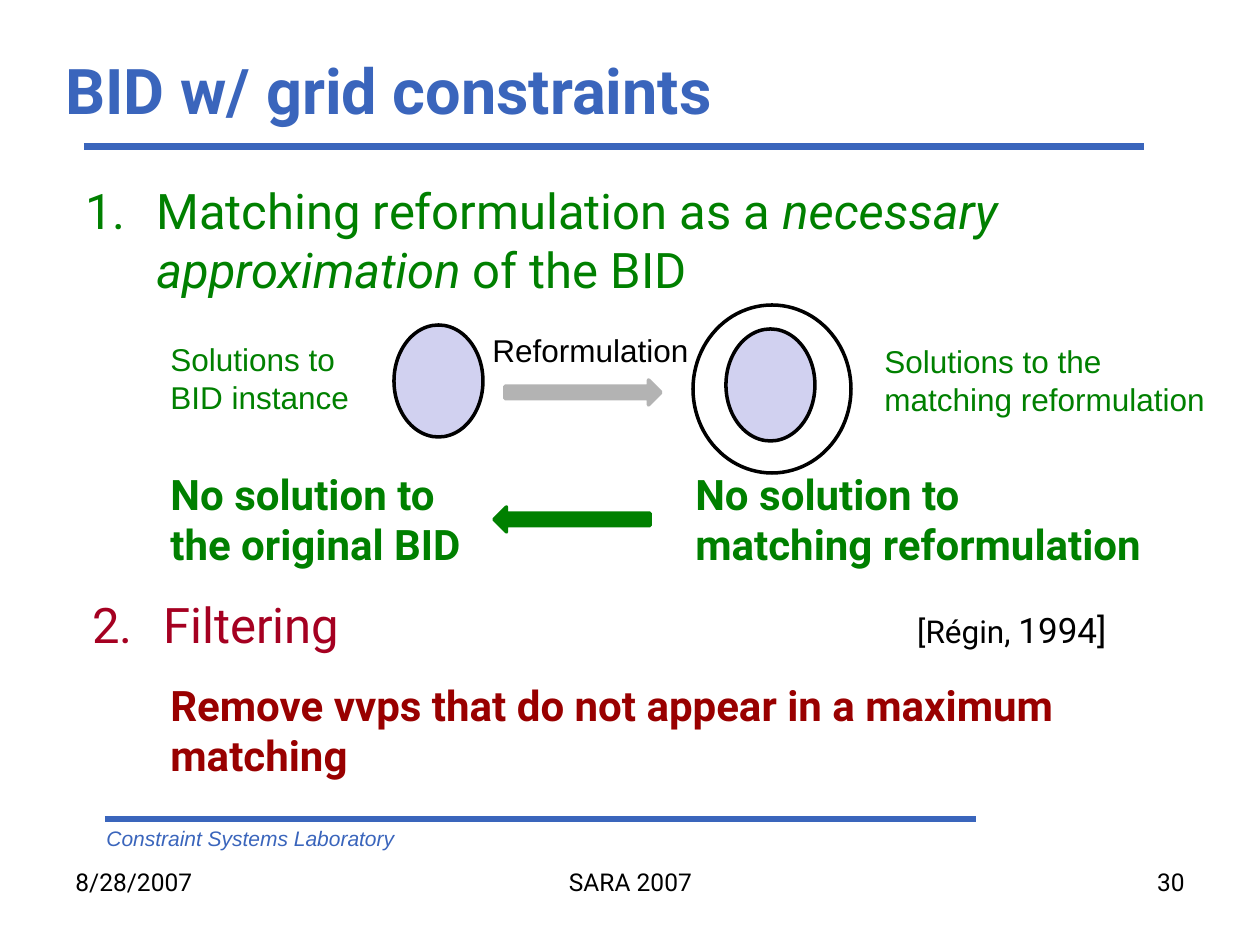
from lxml.etree import SubElement
from pptx import Presentation
from pptx.dml.color import RGBColor
from pptx.enum.shapes import MSO_CONNECTOR, MSO_SHAPE
from pptx.enum.text import MSO_ANCHOR, PP_ALIGN
from pptx.oxml.ns import qn
from pptx.util import Pt

EMU_PER_INCH = 914400
PX_PER_INCH = 126
WIDTH, HEIGHT = 1260, 945

BLUE, GREEN, CRIMSON, DARK_RED = "3A65BC", "008000", "A50021", "990000"
BLACK, WHITE, GREY, LAVENDER = "000000", "FFFFFF", "B3B3B3", "D1D1F0"


def px(length):
    return round(length * EMU_PER_INCH / PX_PER_INCH)


def rgb(color):
    return RGBColor.from_string(color)


def number_paragraph(paragraph, number, color, margin, hanging, tab=None):
    """Give a paragraph a hanging number and, if asked, a right tab stop."""
    properties = paragraph._p.get_or_add_pPr()
    properties.set("marL", str(px(margin)))
    properties.set("indent", str(-px(hanging)))
    bullet_color = SubElement(properties, qn("a:buClr"))
    SubElement(bullet_color, qn("a:srgbClr"), val=color)
    SubElement(properties, qn("a:buFont"), typeface="Roboto")
    SubElement(properties, qn("a:buAutoNum"), type="arabicPeriod", startAt=str(number))
    if tab:
        tabs = SubElement(properties, qn("a:tabLst"))
        SubElement(tabs, qn("a:tab"), pos=str(px(tab)), algn="r")


def format_font(font, size=None, name=None, color=None, bold=None, italic=None):
    if size:
        font.size = Pt(size)
    if name:
        font.name = name
    if color:
        font.color.rgb = rgb(color)
    font.bold = bold
    font.italic = italic


class SlideBuilder:
    def __init__(self, slide, font="Roboto", label_font="Arial"):
        self.slide = slide
        self.font = font
        self.label_font = label_font

    def text(self, box, *paragraphs, align=PP_ALIGN.LEFT, anchor=MSO_ANCHOR.TOP,
             wrap=True, numbering=None, name=None, **style):
        """Each paragraph is a string or a list of (text, format changes)."""
        frame = self.slide.shapes.add_textbox(*map(px, box)).text_frame
        frame.word_wrap = wrap
        frame.vertical_anchor = anchor
        for index, content in enumerate(paragraphs):
            paragraph = frame.add_paragraph() if index else frame.paragraphs[0]
            paragraph.alignment = align
            if numbering:
                number_paragraph(paragraph, **numbering)
            runs = [(content, {})] if isinstance(content, str) else content
            for words, changes in runs:
                run = paragraph.add_run()
                run.text = words
                format_font(run.font, **{"name": name or self.font, **style, **changes})

    def label(self, box, words, color=GREEN, size=18, **style):
        self.text(box, words, name=self.label_font, color=color, size=size, **style)

    def statement(self, box, *paragraphs, color=GREEN):
        self.text(box, *paragraphs, size=24, bold=True, color=color)

    def shape(self, kind, box, fill, line):
        shape = self.slide.shapes.add_shape(kind, *map(px, box))
        shape.shadow.inherit = False
        shape.fill.solid()
        shape.fill.fore_color.rgb = rgb(fill)
        shape.line.color.rgb = rgb(line)
        shape.line.width = Pt(2)

    def ellipse(self, box, fill=LAVENDER):
        self.shape(MSO_SHAPE.OVAL, box, fill, BLACK)

    def rule(self, left, right, y):
        line = self.slide.shapes.add_connector(
            MSO_CONNECTOR.STRAIGHT, px(left), px(y), px(right), px(y))
        line.line.color.rgb = rgb(BLUE)
        line.line.width = Pt(4)
        SubElement(line._element.spPr, qn("a:effectLst"))


def main():
    presentation = Presentation()
    presentation.slide_width, presentation.slide_height = px(WIDTH), px(HEIGHT)
    slide = presentation.slides.add_slide(presentation.slide_layouts[6])
    builder = SlideBuilder(slide)

    # Frame of the slide
    builder.rule(84, 1144, 147)
    builder.rule(105, 976, 819)
    builder.label((94, 819, 662, 38), "Constraint Systems Laboratory",
                  color=BLUE, size=12, italic=True)
    builder.text((53, 42, 1239, 94), "BID w/ grid constraints",
                 anchor=MSO_ANCHOR.MIDDLE, size=36, bold=True, color=BLUE)
    for left, width, words, align in (
        (63, 294, "8/28/2007", PP_ALIGN.LEFT),
        (431, 399, "SARA 2007", PP_ALIGN.CENTER),
        (903, 294, "30", PP_ALIGN.RIGHT),
    ):
        builder.text((left, 861, width, 66), words, align=align, size=14, color=BLACK)

    # Matching reformulation
    builder.text(
        (73, 174, 1124, 130),
        [("Matching reformulation as a ", {}),
         ("necessary approximation ", {"italic": True}),
         ("of the BID", {})],
        numbering=dict(number=1, color=GREEN, margin=71, hanging=71),
        size=28, color=GREEN)
    builder.label((158, 334, 231, 89), "Solutions to BID instance")
    builder.shape(MSO_SHAPE.RIGHT_ARROW, (505, 380, 156, 25), GREY, GREY)
    builder.label((480, 325, 223, 50), "Reformulation", color=BLACK, wrap=False)
    builder.ellipse((693, 305, 158, 168), fill=WHITE)
    builder.ellipse((726, 329, 89, 112))
    builder.ellipse((394, 325, 89, 112))
    builder.label((872, 336, 357, 89), "Solutions to the matching reformulation")

    builder.statement((683, 462, 514, 115), "No solution to", "matching reformulation")
    builder.statement((158, 462, 336, 115), "No solution to the original BID")
    builder.shape(MSO_SHAPE.LEFT_ARROW, (494, 507, 156, 25), GREEN, GREEN)

    # Filtering
    builder.text(
        (73, 588, 1124, 73),
        [("Filtering\t", {}),
         ("[Régin, ", {"size": 18, "color": BLACK}),
         ("1994]", {"size": 20, "color": BLACK})],
        numbering=dict(number=2, color=CRIMSON, margin=78, hanging=71, tab=1094),
        size=28, color=CRIMSON)
    builder.statement((158, 673, 1029, 115),
                      "Remove vvps that do not appear in a maximum matching",
                      color=DARK_RED)

    presentation.save("out.pptx")


if __name__ == "__main__":
    main()
